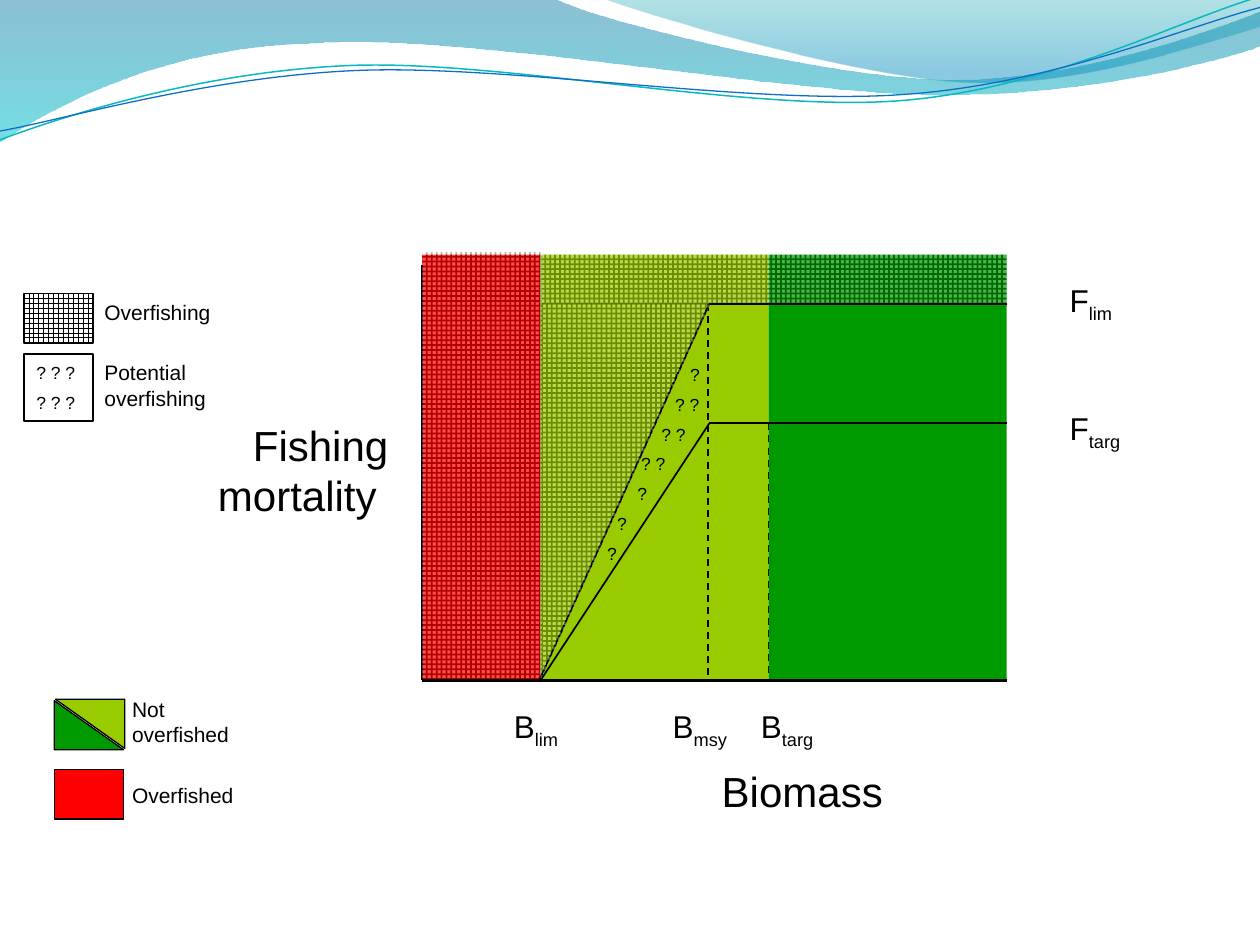
from collections import namedtuple
from dataclasses import dataclass
from math import cos, radians, sin

from lxml.etree import SubElement
from pptx import Presentation
from pptx.dml.color import RGBColor
from pptx.enum.dml import MSO_LINE, MSO_PATTERN
from pptx.enum.shapes import MSO_CONNECTOR, MSO_SHAPE
from pptx.enum.text import PP_ALIGN
from pptx.oxml.ns import qn
from pptx.util import Inches, Pt

Box = namedtuple("Box", "left top width height")


@dataclass(frozen=True)
class Theme:
    font: str = "Arial"
    ink: str = "000000"
    paper: str = "FFFFFF"
    overfished: str = "FF0000"
    depleted: str = "99CC00"
    healthy: str = "009900"
    teal_line: str = "0AB8BF"
    blue_line: str = "0F6FC6"
    wave_back: tuple = ((0, "0074A1", 45), (1, "00C6CF", 55))
    wave_front: tuple = ((0, "00A1A9", 30), (0.8, "008BBF", 45))
    axis_title: int = 24
    mark: int = 18
    key: int = 12
    query: int = 10
    query_gap: int = 5
    key_gap: int = 20


THEME = Theme()
STRAND_TILT = 357.3


def rgb(code):
    return RGBColor.from_string(code)


def inside(box, left, top, width, height):
    return Box(box.left + left, box.top + top, width, height)


def set_alpha(color_parent, percent):
    for color in color_parent.iter(qn("a:srgbClr")):
        SubElement(color, qn("a:alpha")).set("val", str(percent * 1000))


def set_line(line, color, width):
    if color is None:
        line.fill.background()
    else:
        line.color.rgb = rgb(color)
        line.width = Pt(width)


def add_area(parent, box, fill=None, line=None, width=1, kind=MSO_SHAPE.RECTANGLE, flips=()):
    area = parent.shapes.add_shape(kind, *map(Inches, box))
    area.shadow.inherit = False
    set_line(area.line, line, width)
    if fill:
        area.fill.solid()
        area.fill.fore_color.rgb = rgb(fill)
    else:
        area.fill.background()
    for flip in flips:
        area._element.spPr.find(qn("a:xfrm")).set(flip, "1")
    return area


def add_grid(slide, box, opacity=None, **options):
    area = add_area(slide, box, **options)
    area.fill.patterned()
    area.fill.pattern = MSO_PATTERN.LARGE_GRID
    area.fill.fore_color.rgb = rgb(THEME.ink)
    area.fill.back_color.rgb = rgb(THEME.paper)
    if opacity:
        set_alpha(area._element.spPr.find(qn("a:pattFill")), opacity)


def add_rule(slide, box, start, end, width=1, dashed=False):
    ends = [Inches(offset + origin) for point in (start, end)
            for offset, origin in zip(point, (box.left, box.top))]
    rule = slide.shapes.add_connector(MSO_CONNECTOR.STRAIGHT, *ends)
    set_line(rule.line, THEME.ink, width)
    if dashed:
        rule.line.dash_style = MSO_LINE.DASH
    SubElement(rule._element.spPr, qn("a:effectLst"))


def write(frame, lines, size, gap=0, indents=None, align=PP_ALIGN.LEFT):
    """Each line is a list of runs; a second run is a subscript."""
    frame.word_wrap = True
    for index, runs in enumerate(lines):
        paragraph = frame.paragraphs[0] if index == 0 else frame.add_paragraph()
        paragraph.alignment = align
        if index:
            paragraph.space_before = Pt(gap)
        if indents:
            paragraph._p.get_or_add_pPr().set("marL", str(Inches(indents[index])))
        for position, text in enumerate(runs):
            run = paragraph.add_run()
            run.text = text
            formats = {"name": THEME.font, "size": Pt(size)}
            for name, value in formats.items():
                setattr(run.font, name, value)
            run.font.color.rgb = rgb(THEME.ink)
            if position:
                run._r.get_or_add_rPr().set("baseline", "-25000")


def add_text(slide, box, lines, size, **options):
    label = slide.shapes.add_textbox(*map(Inches, box))
    write(label.text_frame, lines, size, **options)


def turned(point, center, degrees):
    x, y = (value - middle for value, middle in zip(point, center))
    turn = radians(degrees)
    return (center[0] + x * cos(turn) - y * sin(turn),
            center[1] + x * sin(turn) + y * cos(turn))


def add_curve(parent, box, start, segments, closed):
    """Segments of one point are straight, segments of three are cubic."""
    points = [(Inches(box.left + x), Inches(box.top + y))
              for x, y in [start] + [point for segment in segments for point in segment]]
    builder = parent.shapes.build_freeform(*points[0])
    builder.add_line_segments(points[1:], close=closed)
    curve = builder.convert_to_shape()
    curve.shadow.inherit = False
    steps = iter(list(curve._element.iter(qn("a:lnTo"))))
    for segment in segments:
        first, *others = [next(steps) for _ in segment]
        if others:
            cubic = first.makeelement(qn("a:cubicBezTo"))
            first.addprevious(cubic)
            for step in (first, *others):
                cubic.append(step[0])
                step.getparent().remove(step)
    return curve


def draw_waves(slide, box):
    # Tinted bands
    bands = (
        (THEME.wave_back, (0, 0),
         [[(4.4, -0.01)], [(4.76, 0.17), (6.64, 0.63), (7.58, 0.63)],
          [(8.53, 0.63), (9.58, 0.26), (10, 0.09)], [(10.01, 0.36)],
          [(9.83, 0.44), (8.7, 0.76), (7.46, 0.75)],
          [(6.22, 0.75), (3.82, 0.28), (2.57, 0.34)],
          [(1.29, 0.36), (0.46, 0.83), (-0.01, 1.13)]]),
        (THEME.wave_front, (4.79, -0.01),
         [[(5.09, 0.11), (6.82, 0.62), (7.69, 0.65)],
          [(8.56, 0.69), (9.61, 0.32), (10, 0.21)], [(10, 0)]]),
    )
    for stops, start, segments in bands:
        band = add_curve(slide, box, start, segments, True)
        set_line(band.line, None, 0)
        band.fill.gradient()
        band.fill.gradient_angle = 270
        for stop, (position, color, opacity) in zip(band.fill.gradient_stops, stops):
            stop.position = position
            stop.color.rgb = rgb(color)
            set_alpha(stop._gs, opacity)
    # Thin tilted strands
    strands = (
        (THEME.teal_line, 0.85, (4.99, 0.57), (0, 1.11),
         [[(0.48, 0.93), (1.58, 0.57), (2.77, 0.52)],
          [(3.95, 0.47), (5.93, 0.89), (7.13, 0.8)],
          [(8.33, 0.71), (9.38, 0.15), (9.98, -0.02)]]),
        (THEME.blue_line, 0.75, (5, 0.59), (0, 1.04),
         [[(0.47, 0.96), (1.64, 0.61), (2.83, 0.56)],
          [(4.03, 0.51), (5.97, 0.84), (7.17, 0.75)],
          [(8.36, 0.67), (9.41, 0.21), (10, 0.06)]]),
    )
    group = slide.shapes.add_group_shape()
    for color, width, center, start, segments in strands:
        level = [[turned(point, center, -STRAND_TILT) for point in segment]
                 for segment in segments]
        strand = add_curve(group, box, turned(start, center, -STRAND_TILT), level, False)
        strand.rotation = STRAND_TILT
        strand.fill.background()
        set_line(strand.line, color, width)


def draw_control_rule(slide, box):
    b_lim, b_msy, b_targ = 0.94, 2.28, 2.75
    f_lim, f_targ, base = 0.39, 1.34, 3.38
    right = box.width
    # Stock status zones
    edges = (0, b_lim, b_targ, right)
    colors = (THEME.overfished, THEME.depleted, THEME.healthy)
    for start, end, color in zip(edges, edges[1:], colors):
        add_area(slide, inside(box, start, 0, end - start, box.height), color)
    # Axes
    add_rule(slide, box, (0, 0.08), (0, base), 1.5)
    add_rule(slide, box, (0, base), (right, base), 1.5)
    # Limit and target rules with their thresholds
    for level, foot in ((f_lim, 0.93), (f_targ, b_lim)):
        add_rule(slide, box, (b_msy, level), (right, level))
        add_rule(slide, box, (foot, base), (b_msy, level))
    for biomass, level in ((2.27, f_lim), (b_targ, f_targ)):
        add_rule(slide, box, (biomass, level), (biomass, base), dashed=True)
    # Overfishing grid
    add_grid(slide, inside(box, 0, -0.02, 0.95, box.height), opacity=30)
    add_grid(slide, inside(box, 0.95, f_lim, 1.34, 2.97), opacity=30,
             kind=MSO_SHAPE.RIGHT_TRIANGLE, flips=("flipV",))
    add_grid(slide, inside(box, b_lim, 0, right - b_lim, f_lim), opacity=30)
    # Potential overfishing marks
    add_text(slide, inside(box, 1.22, 0.82, 1.26, 2.02),
             [[mark] for mark in ("?", "? ?", "? ?", "? ?", "?", "?", "?")],
             THEME.query, gap=THEME.query_gap,
             indents=(0.81, 0.69, 0.58, 0.42, 0.39, 0.23, 0.15))
    # Axis titles
    add_text(slide, inside(box, -2.37, 1.26, 2.2, 0.9), [["Fishing mortality "]],
             THEME.axis_title, align=PP_ALIGN.RIGHT)
    add_text(slide, inside(box, 2.28, 4.01, 1.97, 0.5), [["Biomass"]], THEME.axis_title)
    # Reference point names
    names = (("B", "lim", 0.63, 3.54, 0.71), ("B", "msy", 1.89, 3.54, 0.71),
             ("B", "targ", 2.59, 3.54, 0.87), ("F", "lim", 5.04, 0.16, 0.71),
             ("F", "targ", 5.04, 1.18, 0.79))
    for letter, subscript, left, top, width in names:
        add_text(slide, inside(box, left, top, width, 0.4), [[letter, subscript]], THEME.mark)


def draw_fishing_key(slide, box):
    add_grid(slide, inside(box, 0, 0, 0.55, 0.39), line=THEME.ink)
    potential = add_area(slide, inside(box, 0, 0.48, 0.55, 0.53), line=THEME.ink)
    write(potential.text_frame, [["? ? ?"]] * 2, THEME.query, gap=THEME.query_gap)
    add_text(slide, inside(box, 0.54, 0, 1.18, 1),
             [["Overfishing"], ["Potential overfishing"]], THEME.key, gap=THEME.key_gap)


def draw_stock_key(slide, box):
    swatch = slide.shapes.add_group_shape()
    halves = ((THEME.healthy, 0, 0.08, ()), (THEME.depleted, 0.01, 0.07, ("flipH", "flipV")))
    for color, left, top, flips in halves:
        add_area(swatch, inside(box, left, top, 0.55, 0.39), color, THEME.ink, 0.75,
                 MSO_SHAPE.RIGHT_TRIANGLE, flips)
    add_area(slide, inside(box, 0, 0.63, 0.55, 0.39), THEME.overfished, THEME.ink, 0.75)
    add_text(slide, inside(box, 0.52, 0, 1.26, 1),
             [["Not overfished"], ["Overfished"]], THEME.key, gap=THEME.key_gap)


def main():
    deck = Presentation()
    deck.slide_width, deck.slide_height = Inches(10), Inches(7.5)
    slide = deck.slides.add_slide(deck.slide_layouts[6])
    draw_waves(slide, Box(0, 0, 10, 1.13))
    draw_control_rule(slide, Box(3.35, 2.02, 4.64, 3.39))
    draw_stock_key(slide, Box(0.43, 5.48, 1.78, 1.02))
    draw_fishing_key(slide, Box(0.19, 2.33, 1.72, 1.01))
    deck.save("out.pptx")


if __name__ == "__main__":
    main()
